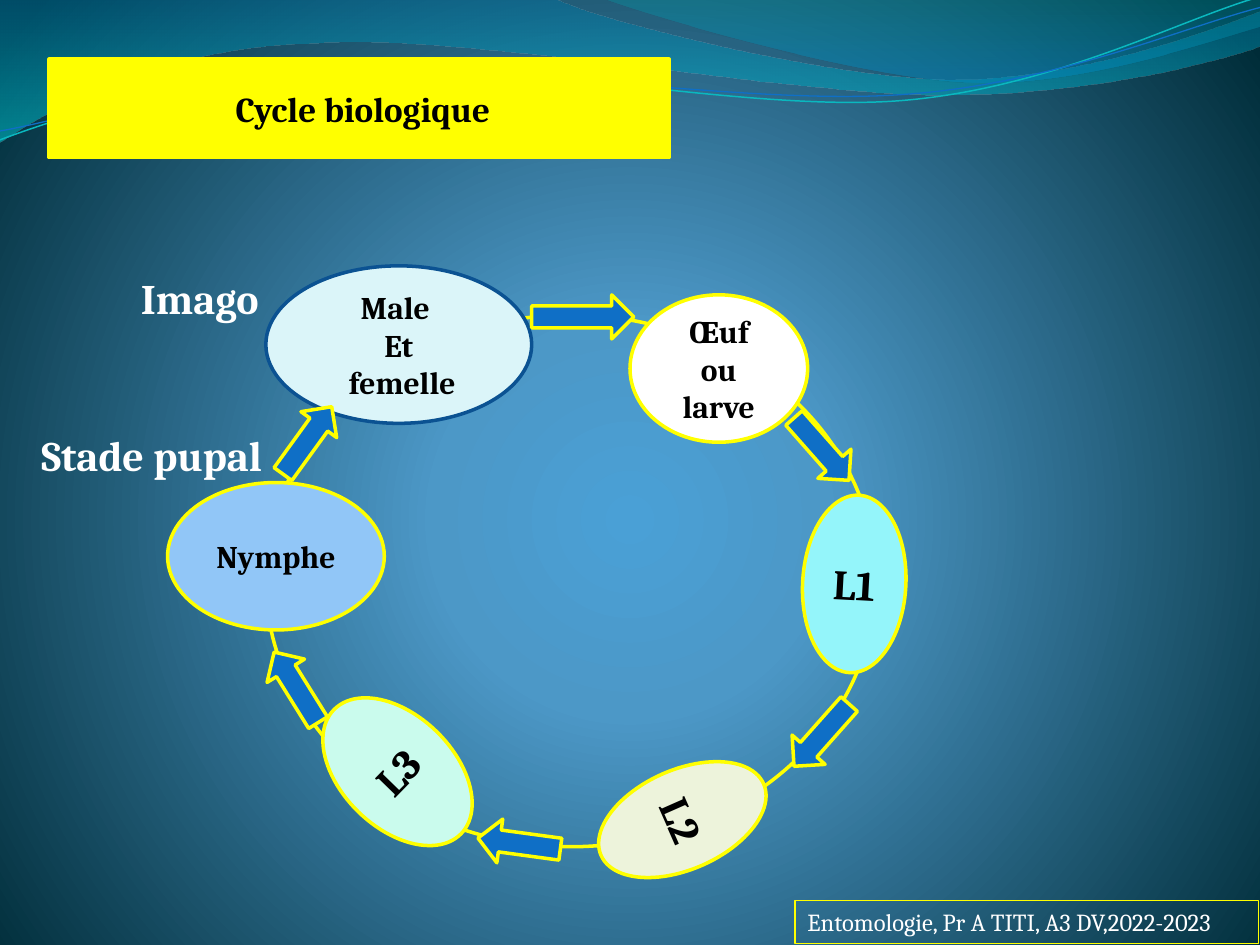
import math

import pptx
import pptx.dml.color
import pptx.enum.shapes
import pptx.enum.text
import pptx.oxml
import pptx.oxml.ns
import pptx.util

Inches = pptx.util.Inches
Pt = pptx.util.Pt
RGBColor = pptx.dml.color.RGBColor
MSO_SHAPE = pptx.enum.shapes.MSO_SHAPE
PP_ALIGN = pptx.enum.text.PP_ALIGN
MSO_ANCHOR = pptx.enum.text.MSO_ANCHOR
MSO_AUTO_SIZE = pptx.enum.text.MSO_AUTO_SIZE
qn = pptx.oxml.ns.qn

FONT = "Cambria"
YELLOW = RGBColor(0xFF, 0xFF, 0x00)
BLACK = RGBColor(0x00, 0x00, 0x00)
WHITE = RGBColor(0xFF, 0xFF, 0xFF)
BLUE = RGBColor(0x0F, 0x6F, 0xC6)
NAVY = RGBColor(0x0B, 0x52, 0x92)
TEAL = RGBColor(0x0A, 0xB8, 0xBF)
ICE = RGBColor(0xDB, 0xF5, 0xF9)
CYAN = RGBColor(0x94, 0xF5, 0xFA)
CREAM = RGBColor(0xED, 0xF3, 0xDB)
SKY = RGBColor(0x91, 0xC6, 0xF7)
MINT = RGBColor(0xCA, 0xFB, 0xED)
BG_INNER = RGBColor(0x4A, 0xA0, 0xD6)
BG_MIDDLE = RGBColor(0x4C, 0x98, 0xC7)
BG_OUTER = RGBColor(0x00, 0x2C, 0x38)
WAVE_BLUE = RGBColor(0x00, 0x74, 0xA1)
WAVE_AQUA = RGBColor(0x00, 0xC6, 0xCF)
WAVE_GREEN = RGBColor(0x00, 0xA1, 0xA9)
WAVE_AZURE = RGBColor(0x00, 0x8B, 0xBF)

CIRCLE = ('<a:path path="circle"><a:fillToRect l="10000" t="110000" '
          'r="10000" b="100000"/></a:path>')
DOWNWARD = '<a:lin ang="5400000" scaled="1"/>'
TILT = -2.7


def set_gradient(fill, parent, stops, direction):
    fill.gradient()
    old = next(parent.iter(qn("a:gradFill")))
    gs = "".join(
        f'<a:gs pos="{pos * 1000}"><a:srgbClr val="{color}">'
        f'<a:alpha val="{alpha * 1000}"/></a:srgbClr></a:gs>'
        for pos, color, alpha in stops)
    new = pptx.oxml.parse_xml(
        f'<a:gradFill {pptx.oxml.ns.nsdecls("a")} rotWithShape="1">'
        f'<a:gsLst>{gs}</a:gsLst>{direction}</a:gradFill>')
    old.getparent().replace(old, new)


def set_text(shape, lines, size, color, bold=True, align=PP_ALIGN.CENTER):
    tf = shape.text_frame
    tf.text = "\n".join(lines)
    for p in tf.paragraphs:
        p.alignment = align
        p.font.name = FONT
        p.font.size = Pt(size)
        p.font.bold = bold
        p.font.color.rgb = color
    return tf


def add_shape(s, kind, left, top, width, height, fill=None, line=YELLOW,
              weight=2, rotation=0):
    sp = s.shapes.add_shape(kind, Inches(left), Inches(top),
                            Inches(width), Inches(height))
    sp.shadow.inherit = False
    sp.rotation = rotation
    if fill is None:
        sp.fill.background()
    else:
        sp.fill.solid()
        sp.fill.fore_color.rgb = fill
    sp.line.color.rgb = line
    sp.line.width = Pt(weight)
    return sp


def turn(point, center, degrees):
    angle = math.radians(degrees)
    dx, dy = point[0] - center[0], point[1] - center[1]
    return (center[0] + dx * math.cos(angle) - dy * math.sin(angle),
            center[1] + dx * math.sin(angle) + dy * math.cos(angle))


def add_wave(s, left, top, segments, closed):
    points = [point for segment in segments for point in segment]
    emu = [(Inches(left + x), Inches(top + y)) for x, y in points]
    builder = s.shapes.build_freeform(*emu[0], scale=1.0)
    builder.add_line_segments(emu[1:], close=closed)
    sp = builder.convert_to_shape()
    sp.shadow.inherit = False
    nodes = list(sp.element.iter(qn("a:lnTo")))
    index = -1
    for segment in segments:
        if len(segment) == 3:
            curve = pptx.oxml.parse_xml(
                f'<a:cubicBezTo {pptx.oxml.ns.nsdecls("a")}/>')
            nodes[index].addprevious(curve)
            for node in nodes[index:index + 3]:
                curve.append(node[0])
                node.getparent().remove(node)
        index += len(segment)
    return sp


def add_waves(s, left, top):
    wide = [
        [(0, 0)], [(4.4, -0.01)],
        [(4.76, 0.17), (6.64, 0.63), (7.58, 0.63)],
        [(8.53, 0.63), (9.58, 0.26), (10, 0.09)],
        [(10.01, 0.36)],
        [(9.83, 0.44), (8.7, 0.76), (7.46, 0.75)],
        [(6.22, 0.75), (3.82, 0.28), (2.57, 0.34)],
        [(1.29, 0.36), (0.46, 0.83), (-0.01, 1.13)],
    ]
    short = [
        [(4.79, -0.01)],
        [(5.09, 0.11), (6.82, 0.62), (7.69, 0.65)],
        [(8.56, 0.69), (9.61, 0.32), (10, 0.21)],
        [(10, 0)],
    ]
    for segments, stops in (
            (wide, [(0, WAVE_BLUE, 45), (100, WAVE_AQUA, 55)]),
            (short, [(0, WAVE_GREEN, 30), (80, WAVE_AZURE, 45)])):
        sp = add_wave(s, left, top, segments, True)
        set_gradient(sp.fill, sp.element, stops, DOWNWARD)
        sp.line.fill.background()

    for color, weight, center, segments in (
            (TEAL, 0.85, (4.99, 0.58), [
                [(0, 1.11)],
                [(0.48, 0.93), (1.58, 0.57), (2.77, 0.52)],
                [(3.95, 0.47), (5.93, 0.89), (7.13, 0.8)],
                [(8.33, 0.71), (9.38, 0.15), (9.98, -0.02)]]),
            (BLUE, 0.75, (5, 0.59), [
                [(0, 1.04)],
                [(0.47, 0.96), (1.64, 0.61), (2.83, 0.56)],
                [(4.03, 0.51), (5.97, 0.84), (7.17, 0.75)],
                [(8.36, 0.67), (9.41, 0.21), (10, 0.06)]])):
        level = [[turn(point, center, -TILT) for point in segment]
                 for segment in segments]
        sp = add_wave(s, left, top, level, False)
        sp.rotation = TILT
        sp.fill.background()
        sp.line.color.rgb = color
        sp.line.width = Pt(weight)


def add_title(s, left, top, width, height):
    sp = add_shape(s, MSO_SHAPE.RECTANGLE, left, top, width, height, YELLOW)
    set_text(sp, [" Cycle biologique"], 20, BLACK)


def add_cycle(s, left, top):
    add_shape(s, MSO_SHAPE.OVAL, left + 0.78, top + 0.39, 4.84, 4.22)
    stages = [
        (["Male ", "Et", " femelle"], 18, 0.78, 0, 2.11, 1.25, ICE, NAVY, 0),
        (["Œuf ou larve"], 18, 3.67, 0.23, 1.41, 1.17, WHITE, YELLOW, 0),
        (["L1"], 24, 5.04, 1.82, 0.82, 1.41, CYAN, YELLOW, 3.1),
        (["L2"], 24, 3.69, 3.69, 0.79, 1.41, CREAM, YELLOW, 66.2),
        (["Nymphe"], 18, 0, 1.72, 1.72, 1.17, SKY, YELLOW, 0),
        (["L3"], 24, 1.38, 3.31, 0.89, 1.41, MINT, YELLOW, 314.3),
    ]
    for lines, size, x, y, w, h, fill, line, rotation in stages:
        sp = add_shape(s, MSO_SHAPE.OVAL, left + x, top + y, w, h, fill, line,
                       rotation=rotation)
        set_text(sp, lines, size, BLACK)
    arrows = [
        (2.89, 0.23, 0.81, 0), (4.86, 1.28, 0.66, 48.6),
        (4.86, 3.55, 0.66, 131.6), (2.46, 4.41, 0.66, 187.7),
        (0.69, 3.17, 0.66, 238.1), (0.78, 1.21, 0.66, 305.9),
    ]
    for x, y, w, rotation in arrows:
        add_shape(s, MSO_SHAPE.RIGHT_ARROW, left + x, top + y, w, 0.35, BLUE,
                  rotation=rotation)


def add_label(s, text, left, top, width, height, wrap):
    sp = s.shapes.add_textbox(Inches(left), Inches(top),
                              Inches(width), Inches(height))
    tf = set_text(sp, [text], 24, WHITE, align=PP_ALIGN.LEFT)
    tf.word_wrap = wrap
    tf.auto_size = MSO_AUTO_SIZE.SHAPE_TO_FIT_TEXT


def add_footer(s, left, top, width, height):
    sp = add_shape(s, MSO_SHAPE.RECTANGLE, left, top, width, height,
                   weight=0.75)
    tf = set_text(sp, ["Entomologie, Pr A TITI, A3 DV,2022-2023"], 14, WHITE,
                  bold=False, align=PP_ALIGN.LEFT)
    tf.vertical_anchor = MSO_ANCHOR.TOP
    tf.word_wrap = False
    tf.auto_size = MSO_AUTO_SIZE.SHAPE_TO_FIT_TEXT


def main():
    prs = pptx.Presentation()
    prs.slide_width = Inches(10)
    prs.slide_height = Inches(7.5)
    s = prs.slides.add_slide(prs.slide_layouts[6])
    set_gradient(s.background.fill, s.element,
                 [(0, BG_INNER, 100), (25, BG_MIDDLE, 100),
                  (100, BG_OUTER, 100)], CIRCLE)
    add_waves(s, 0, 0)
    add_title(s, 0.39, 0.47, 4.92, 0.78)
    add_cycle(s, 1.33, 2.11)
    add_label(s, "Imago", 1.02, 2.11, 1.25, 0.5, True)
    add_label(s, "Stade pupal", 0.23, 3.36, 2.06, 0.5, False)
    add_footer(s, 6.31, 7.15, 3.68, 0.34)
    prs.save("out.pptx")


if __name__ == "__main__":
    main()
